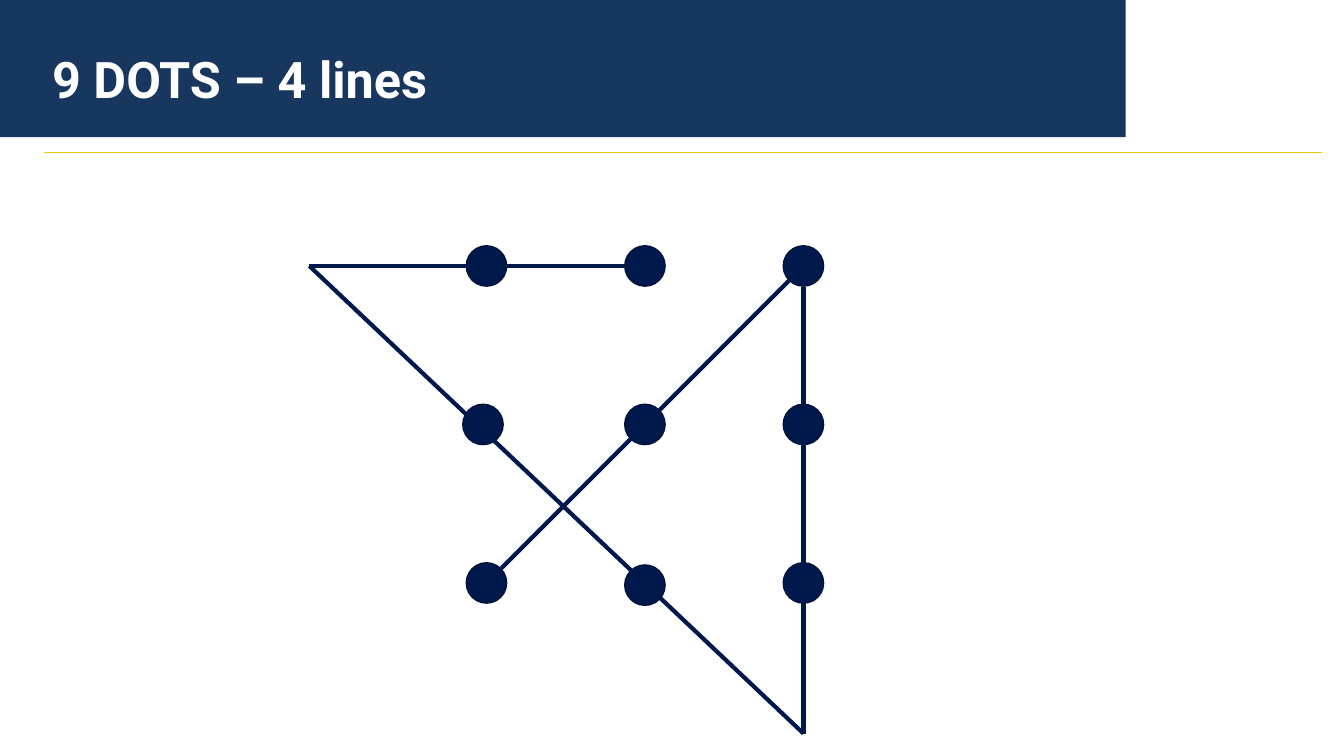
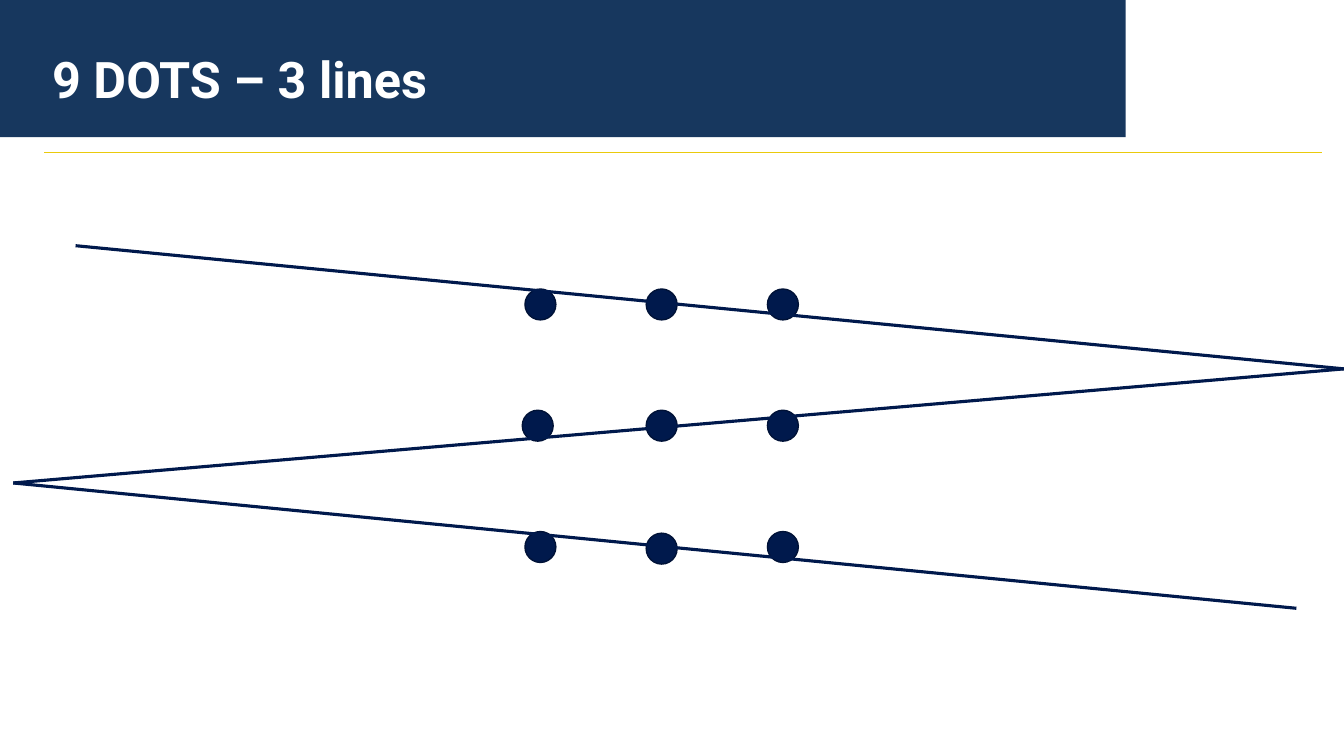
"""Builds two slides on the nine dots puzzle."""
import itertools
from dataclasses import dataclass

import pptx
import pptx.dml.color
import pptx.enum.shapes
import pptx.enum.text
import pptx.oxml
import pptx.util

Pt = pptx.util.Pt
Rgb = pptx.dml.color.RGBColor.from_string


@dataclass(frozen=True)
class Theme:
    font: str = "Roboto"
    size: float = 36
    band: str = "17375E"
    gold: str = "EACA0C"
    navy: str = "00194C"
    edge: str = "001237"
    white: str = "FFFFFF"


theme = Theme()


def add_line(shapes, start, end, color, width):
    ends = [Pt(value) for value in (*start, *end)]
    line = shapes.add_connector(pptx.enum.shapes.MSO_CONNECTOR.STRAIGHT, *ends)
    line.line.color.rgb = Rgb(color)
    line.line.width = Pt(width)
    props = line.element.spPr
    props.append(pptx.oxml.parse_xml(
        '<a:effectLst xmlns:a="http://schemas.openxmlformats.org/drawingml/2006/main"/>'))
    return line


def add_shape(shapes, kind, box, fill, edge=None):
    shape = shapes.add_shape(kind, *[Pt(value) for value in box])
    shape.shadow.inherit = False
    shape.fill.solid()
    shape.fill.fore_color.rgb = Rgb(fill)
    if edge:
        shape.line.color.rgb = Rgb(edge)
        shape.line.width = Pt(1)
    else:
        shape.line.fill.background()
    return shape


def set_layout(deck, layout):
    title = layout.placeholders[0]
    title.left, title.top = Pt(30), Pt(24)
    title.width, title.height = Pt(752), Pt(54.5)
    frame = title.text_frame
    frame.auto_size = pptx.enum.text.MSO_AUTO_SIZE.NONE
    frame.vertical_anchor = pptx.enum.text.MSO_ANCHOR.BOTTOM
    frame.margin_left = frame.margin_right = Pt(7.2)
    frame.margin_top, frame.margin_bottom = Pt(3.6), Pt(0)


def add_decor(slide, layout):
    rect = pptx.enum.shapes.MSO_SHAPE.RECTANGLE
    band = add_shape(slide.shapes, rect, (0, 0, 804, 98), theme.band)
    rule = add_line(slide.shapes, (31.5, 108.75), (944.5, 108.75), theme.gold, 0.75)
    for place, shape in enumerate((band, rule), 2):
        layout.shapes.element.insert(place, shape.element)


def add_title(slide, text):
    frame = slide.shapes.title.text_frame
    frame.text = text
    para = frame.paragraphs[0]
    para.alignment = pptx.enum.text.PP_ALIGN.LEFT
    para.line_spacing = 0.9
    font = para.runs[0].font
    font.name, font.size, font.bold = theme.font, Pt(theme.size), True
    font.color.rgb = Rgb(theme.white)


def add_dots(slide, left, top, pitch):
    group = slide.shapes.add_group_shape()
    size = pitch * 0.255
    shift = {(0, 1): (-0.022, 0), (1, 2): (0, 0.014)}
    for col, row in itertools.product(range(3), repeat=2):
        right, down = shift.get((col, row), (0, 0))
        x = left + (col + right) * pitch - size / 2
        y = top + (row + down) * pitch - size / 2
        add_shape(group.shapes, pptx.enum.shapes.MSO_SHAPE.OVAL,
                  (x, y, size, size), theme.navy, theme.edge)


def add_trails(slide, trails, width):
    group = slide.shapes.add_group_shape()
    for trail in trails:
        for start, end in itertools.pairwise(trail):
            add_line(group.shapes, start, end, theme.navy, width)


def main():
    deck = pptx.Presentation()
    deck.slide_width, deck.slide_height = Pt(960), Pt(540)
    layout = deck.slide_layouts[5]
    set_layout(deck, layout)

    four = deck.slides.add_slide(layout)
    add_decor(four, layout)
    add_title(four, "9 DOTS – 4 lines")
    add_dots(four, 347.5, 190, 113.2)
    add_trails(four, [
        [(446, 190), (221, 190), (574, 524), (574, 205)],
        [(564, 200), (358, 406)],
    ], 3)

    three = deck.slides.add_slide(layout)
    add_title(three, "9 DOTS – 3 lines")
    add_dots(three, 386, 217.5, 86.6)
    add_trails(three, [
        [(54, 175.5), (960, 263.5), (9.5, 345), (926, 434.5)],
    ], 2.25)

    deck.save("out.pptx")


if __name__ == "__main__":
    main()
